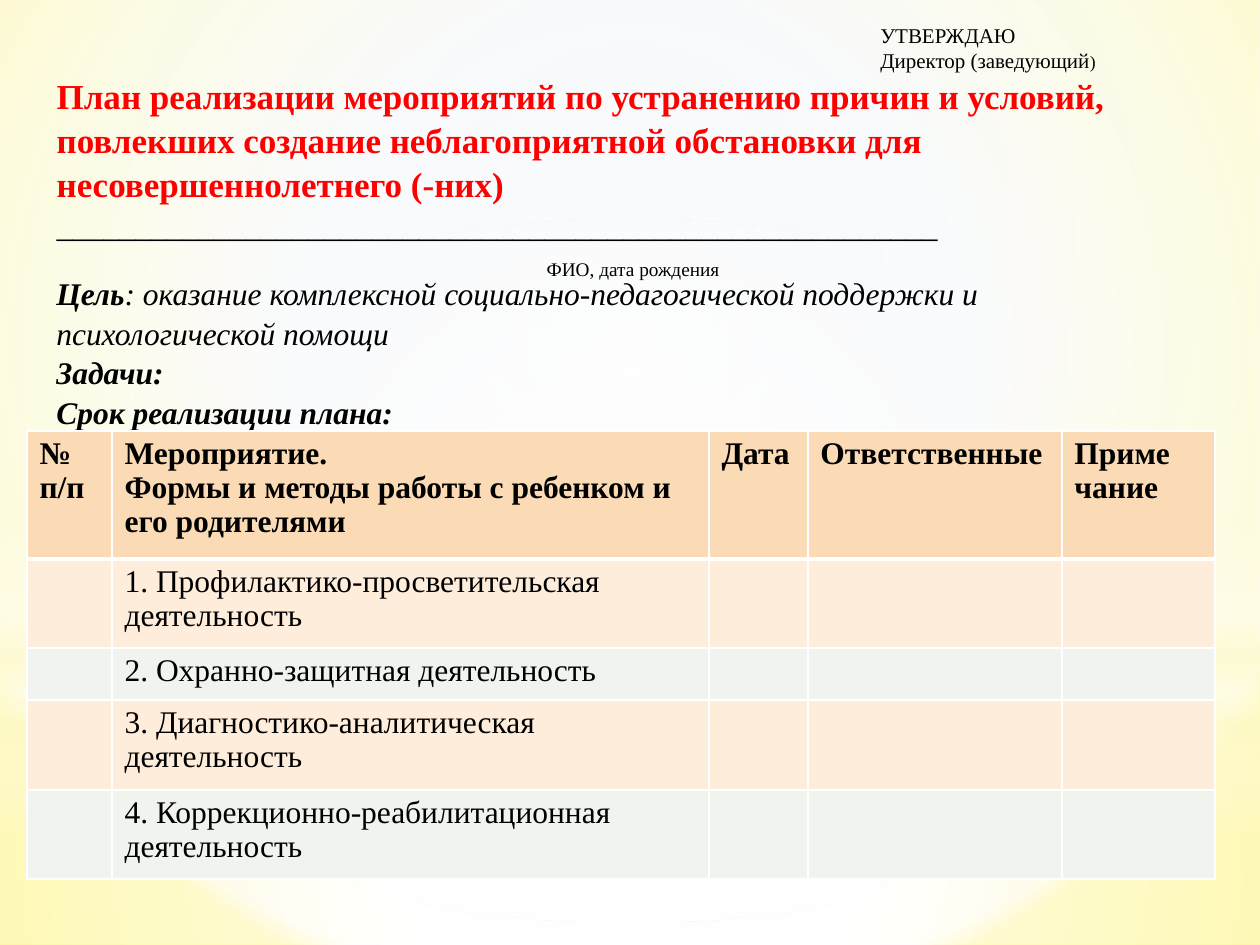
"""Build the slide with the action plan for improving a child's situation."""
import pptx
import pptx.dml.color
import pptx.enum.shapes
import pptx.enum.text
import pptx.oxml
import pptx.oxml.ns
import pptx.util

PX = 914400 // 126
FONT = "Times New Roman"
RECT = pptx.enum.shapes.MSO_SHAPE.RECTANGLE
OVAL = pptx.enum.shapes.MSO_SHAPE.OVAL
CENTER = (50, 50, 50, 50)

BACKGROUND = [(0, "E6ECF3", 100), (97, "FFFFFF", 100), (100, "FFF46F", 100)]
GLOWS = [
    (RECT, (0, 703, 1260, 242), CENTER,
     [(0, "FFFFFF", 91), (37, "FFFFFF", 76), (100, "FEFAC9", 79)]),
    (RECT, (0, 0, 1260, 703), CENTER,
     [(0, "FFFFFF", 89), (48, "FFFFFF", 62), (100, "FEFAC9", 79)]),
    (RECT, (0, 519, 1260, 315), None,
     [(0, "FFFFFF", 0), (29, "FFFFFF", 30), (45, "FEFAC9", 40),
      (55, "FFFFFF", 26), (65, "FEFAC9", 60), (100, "FFFFFF", 0)]),
    (OVAL, (0, 220, 1260, 703), CENTER, [(0, "FFFFFF", 100), (56, "FFFFFF", 0)]),
]

APPROVAL = [
    [("УТВЕРЖДАЮ", 12, "")],
    [("Директор (заведующий", 12, ""), (")", 10, "")],
]
TITLE = [
    [("План реализации мероприятий по устранению причин и условий, повлекших создание "
      "неблагоприятной обстановки для несовершеннолетнего (-них) ", 20, "b", "FF0000"),
     ("_" * 56, 18, "")],
    [("ФИО, дата рождения", 11, "")],
]
GOAL = [
    [("Цель", 18, "bi"),
     (": оказание комплексной социально-педагогической поддержки и "
      "психологической помощи", 18, "i")],
    [("Задачи:", 18, "bi")],
    [("Срок реализации плана:", 18, "bi")],
]
HEADER = [
    ["№", "п/п"],
    ["Мероприятие.", "Формы и методы работы с ребенком и его родителями"],
    ["Дата"],
    ["Ответственные"],
    ["Приме", "чание"],
]
ACTIVITIES = [
    "1. Профилактико-просветительская деятельность",
    "2. Охранно-защитная деятельность",
    "3. Диагностико-аналитическая деятельность",
    "4. Коррекционно-реабилитационная деятельность",
]
COLUMNS = [85, 597, 99, 254, 153]
ROWS = [128, 89, 52, 90, 89]
HEADER_FILL = "FADBB5"
BANDS = ["FDEDDA", "F0F3EE"]


def color(value):
    return pptx.dml.color.RGBColor.from_string(value)


def scale(box):
    return [n * PX for n in box]


def set_gradient(fill, element, stops, focus):
    fill.gradient()
    grad = next(element.iter(pptx.oxml.ns.qn("a:gradFill")))
    items = "".join(
        f'<a:gs pos="{pos * 1000}"><a:srgbClr val="{rgb}">'
        f'<a:alpha val="{alpha * 1000}"/></a:srgbClr></a:gs>'
        for pos, rgb, alpha in stops)
    if focus:
        sides = " ".join(f'{k}="{v * 1000}"' for k, v in zip("ltrb", focus))
        shade = f'<a:path path="circle"><a:fillToRect {sides}/></a:path>'
    else:
        shade = '<a:lin ang="5400000" scaled="0"/>'
    new = pptx.oxml.parse_xml(
        f'<a:gradFill {pptx.oxml.ns.nsdecls("a")} rotWithShape="1">'
        f'<a:gsLst>{items}</a:gsLst>{shade}</a:gradFill>')
    grad.getparent().replace(grad, new)


def write(tf, paragraphs, spacing):
    for i, runs in enumerate(paragraphs):
        p = tf.add_paragraph() if i else tf.paragraphs[0]
        p.alignment = pptx.enum.text.PP_ALIGN.LEFT
        p.line_spacing = spacing
        for text, size, style, *rgb in runs:
            r = p.add_run()
            r.text = text
            r.font.name = FONT
            r.font.size = pptx.util.Pt(size)
            r.font.bold = "b" in style
            r.font.italic = "i" in style
            r.font.color.rgb = color(rgb[0] if rgb else "000000")


def fill_box(sp, box, paragraphs, spacing):
    sp.left, sp.top, sp.width, sp.height = scale(box)
    tf = sp.text_frame
    tf.word_wrap = True
    tf.auto_size = pptx.enum.text.MSO_AUTO_SIZE.NONE
    tf.vertical_anchor = pptx.enum.text.MSO_ANCHOR.TOP
    write(tf, paragraphs, spacing)


def set_borders(cell, widths):
    tc_pr = cell._tc.get_or_add_tcPr()
    for side, width in zip("LRTB", widths):
        tc_pr.append(pptx.oxml.parse_xml(
            f'<a:ln{side} {pptx.oxml.ns.nsdecls("a")} w="{width * 12700}"><a:solidFill>'
            f'<a:srgbClr val="FFFFFF"/></a:solidFill></a:ln{side}>'))


def add_plan(s):
    table = s.shapes.add_table(
        len(ROWS), len(COLUMNS), *scale((27, 431, sum(COLUMNS), sum(ROWS)))).table
    for column, width in zip(table.columns, COLUMNS):
        column.width = width * PX
    for row, height in zip(table.rows, ROWS):
        row.height = height * PX
    body = [[[], [text], [], [], []] for text in ACTIVITIES]
    for i, row in enumerate([HEADER] + body):
        for j, lines in enumerate(row):
            cell = table.cell(i, j)
            set_borders(cell, (1, 1, 3 if i == 1 else 1, 3 if i == 0 else 1))
            cell.fill.solid()
            cell.fill.fore_color.rgb = color(BANDS[(i - 1) % 2] if i else HEADER_FILL)
            style = "" if i else "b"
            write(cell.text_frame, [[(text, 18, style)] for text in lines], 0.97)


def main():
    prs = pptx.Presentation()
    prs.slide_width, prs.slide_height = scale((1260, 945))
    s = prs.slides.add_slide(prs.slide_layouts[5])
    set_gradient(s.background.fill, s.element, BACKGROUND, (20, 10, 20, 60))
    for kind, box, focus, stops in GLOWS:
        sp = s.shapes.add_shape(kind, *scale(box))
        sp.shadow.inherit = False
        sp.line.fill.background()
        set_gradient(sp.fill, sp.element, stops, focus)

    approval = (868, 16, 258, 64)
    fill_box(s.shapes.add_textbox(*scale(approval)), approval, APPROVAL, 1.0)

    title = s.shapes.title
    title.element.getparent().append(title.element)
    fill_box(title, (44, 66, 1191, 217), TITLE, 1.05)
    caption = title.text_frame.paragraphs[1]
    caption.space_before = pptx.util.Pt(7)
    caption._p.get_or_add_pPr().set("marL", str(490 * PX))

    goal = (44, 266, 1062, 165)
    fill_box(s.shapes.add_textbox(*scale(goal)), goal, GOAL, 1.05)
    add_plan(s)
    prs.save("out.pptx")


if __name__ == "__main__":
    main()
